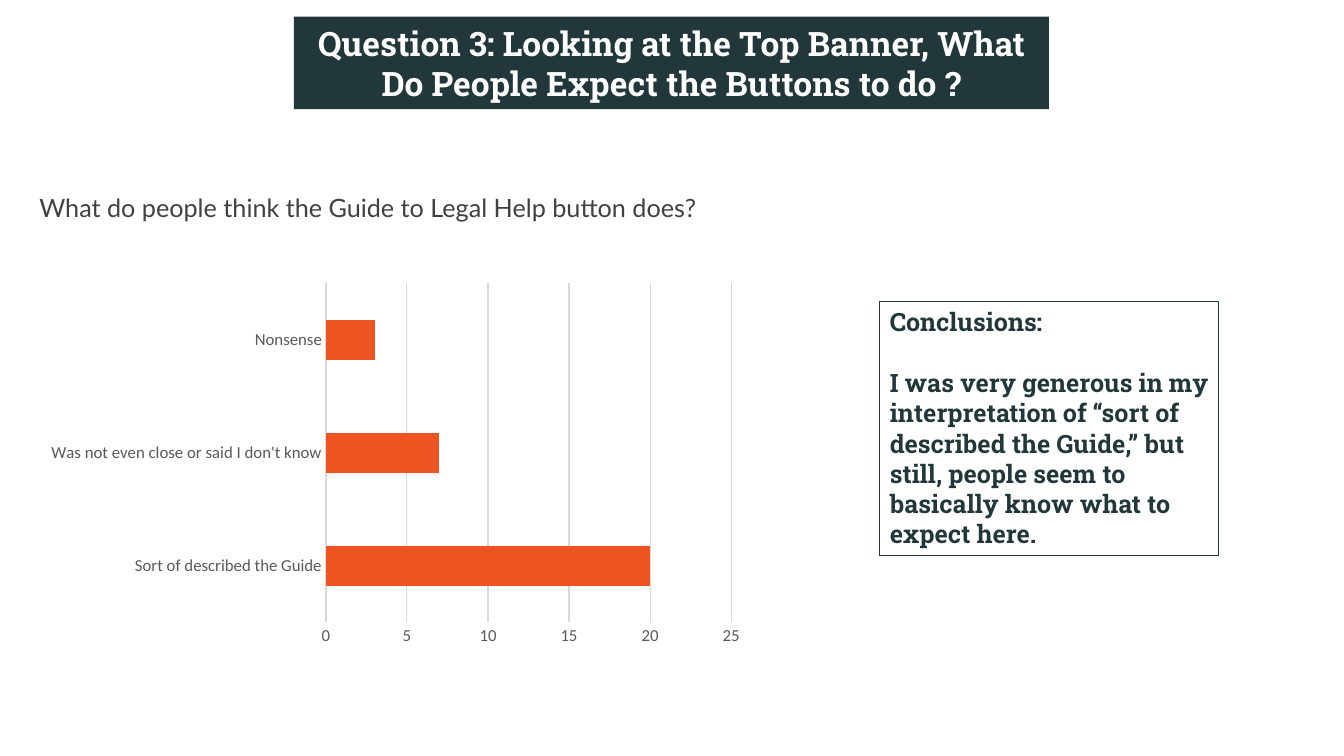
import dataclasses
import typing

import pptx
import pptx.chart.chart
import pptx.chart.data
import pptx.dml.color
import pptx.enum.chart
import pptx.enum.shapes
import pptx.enum.text
import pptx.oxml
import pptx.oxml.ns
import pptx.slide
import pptx.util

RGB = pptx.dml.color.RGBColor
ALIGN = pptx.enum.text.PP_ALIGN
ANCHOR = pptx.enum.text.MSO_ANCHOR

DARK = RGB(0x21, 0x37, 0x39)
WHITE = RGB(0xFF, 0xFF, 0xFF)
GREY = RGB(0x41, 0x41, 0x41)
LABEL = RGB(0x59, 0x59, 0x59)
GRID = RGB(0xD9, 0xD9, 0xD9)
ORANGE = RGB(0xEE, 0x54, 0x22)

SCALE = 9525  # EMU per px
THIN = pptx.util.Pt(0.75)


def px(size: int) -> pptx.util.Emu:
    return pptx.util.Emu(size * SCALE)


@dataclasses.dataclass
class Box:
    area: tuple[int, int, int, int]
    paras: list[str]
    font: str
    size: int
    color: RGB
    bold: bool = True
    fill: typing.Optional[RGB] = None
    line: typing.Optional[RGB] = None
    align: ALIGN = ALIGN.LEFT
    anchor: ANCHOR = ANCHOR.TOP
    gap: int = 0  # points between paragraphs


BOXES = [
    Box((280, 16, 719, 88),
        ["Question 3: Looking at the Top Banner, What Do People Expect the Buttons to do ?"],
        "Roboto Slab", 24, WHITE, fill=DARK, align=ALIGN.CENTER, anchor=ANCHOR.MIDDLE),
    Box((28, 178, 856, 38),
        ["What do people think the Guide to Legal Help button does?"],
        "Lato", 18, GREY, bold=False),
    Box((838, 287, 323, 242),
        ["Conclusions:",
         "I was very generous in my interpretation of “sort of described the Guide,” "
         "but still, people seem to basically know what to expect here."],
        "Roboto Slab", 18, DARK, line=DARK, gap=22),
]

CHART = (28, 255, 689, 375)
VOTES = {
    "Sort of described the Guide": 20,
    "Was not even close or said I don't know": 7,
    "Nonsense": 3,
}
PLOT = {"x": 0.41, "y": 0.04, "w": 0.56, "h": 0.86}


def draw_box(slide: pptx.slide.Slide, box: Box) -> None:
    spot = [px(side) for side in box.area]
    if box.fill or box.line:
        shape = slide.shapes.add_shape(pptx.enum.shapes.MSO_SHAPE.RECTANGLE, *spot)
        shape.shadow.inherit = False
    else:
        shape = slide.shapes.add_textbox(*spot)
    if box.fill:
        shape.fill.solid()
        shape.fill.fore_color.rgb = box.fill
    else:
        shape.fill.background()
    if box.line:
        shape.line.color.rgb = box.line
        shape.line.width = THIN
    else:
        shape.line.fill.background()

    frame = shape.text_frame
    frame.word_wrap = True
    frame.auto_size = pptx.enum.text.MSO_AUTO_SIZE.SHAPE_TO_FIT_TEXT
    frame.vertical_anchor = box.anchor
    for index, text in enumerate(box.paras):
        para = frame.add_paragraph() if index else frame.paragraphs[0]
        para.alignment = box.align
        if index:
            para.space_before = pptx.util.Pt(box.gap)
        run = para.add_run()
        run.text = text
        run.font.name = box.font
        run.font.size = pptx.util.Pt(box.size)
        run.font.bold = box.bold
        run.font.color.rgb = box.color


def place_plot(chart: pptx.chart.chart.Chart) -> None:
    """Fix the inner plot area as fractions of the chart."""
    area = chart.element.xpath("c:chart/c:plotArea")[0]
    for old in area.xpath("c:layout"):
        area.remove(old)
    modes = "".join(f'<c:{key}Mode val="edge"/>' for key in "xy")
    sizes = "".join(f'<c:{key} val="{part}"/>' for key, part in PLOT.items())
    area.insert(0, pptx.oxml.parse_xml(
        f'<c:layout {pptx.oxml.ns.nsdecls("c")}><c:manualLayout>'
        f'<c:layoutTarget val="inner"/>{modes}{sizes}</c:manualLayout></c:layout>'))


def draw_chart(slide: pptx.slide.Slide) -> None:
    kinds = pptx.enum.chart
    data = pptx.chart.data.CategoryChartData()
    data.categories = list(VOTES)
    data.add_series("Series 1", list(VOTES.values()))
    chart = slide.shapes.add_chart(
        kinds.XL_CHART_TYPE.BAR_CLUSTERED, *[px(side) for side in CHART], data).chart
    chart.has_title = False
    chart.has_legend = False
    chart.font.name = "Calibri"
    chart.font.size = pptx.util.Pt(10)

    # Bars
    plot = chart.plots[0]
    plot.gap_width = 182
    plot.vary_by_categories = False
    bars = plot.series[0].format.fill
    bars.solid()
    bars.fore_color.rgb = ORANGE

    # Axes and grid
    cats, vals = chart.category_axis, chart.value_axis
    for axis in (cats, vals):
        axis.major_tick_mark = kinds.XL_TICK_MARK.NONE
        axis.minor_tick_mark = kinds.XL_TICK_MARK.NONE
        font = axis.tick_labels.font
        font.name = "Calibri"
        font.size = pptx.util.Pt(12)
        font.color.rgb = LABEL
    vals.minimum_scale, vals.maximum_scale, vals.major_unit = 0, 25, 5
    vals.has_major_gridlines = True
    vals.format.line.fill.background()
    for line in (cats.format.line, vals.major_gridlines.format.line):
        line.color.rgb = GRID
        line.width = THIN
    place_plot(chart)


def main() -> None:
    deck = pptx.Presentation()
    deck.slide_width, deck.slide_height = px(1280), px(720)
    slide = deck.slides.add_slide(deck.slide_layouts[6])
    for box in BOXES:
        draw_box(slide, box)
    draw_chart(slide)
    deck.save("out.pptx")


if __name__ == "__main__":
    main()
